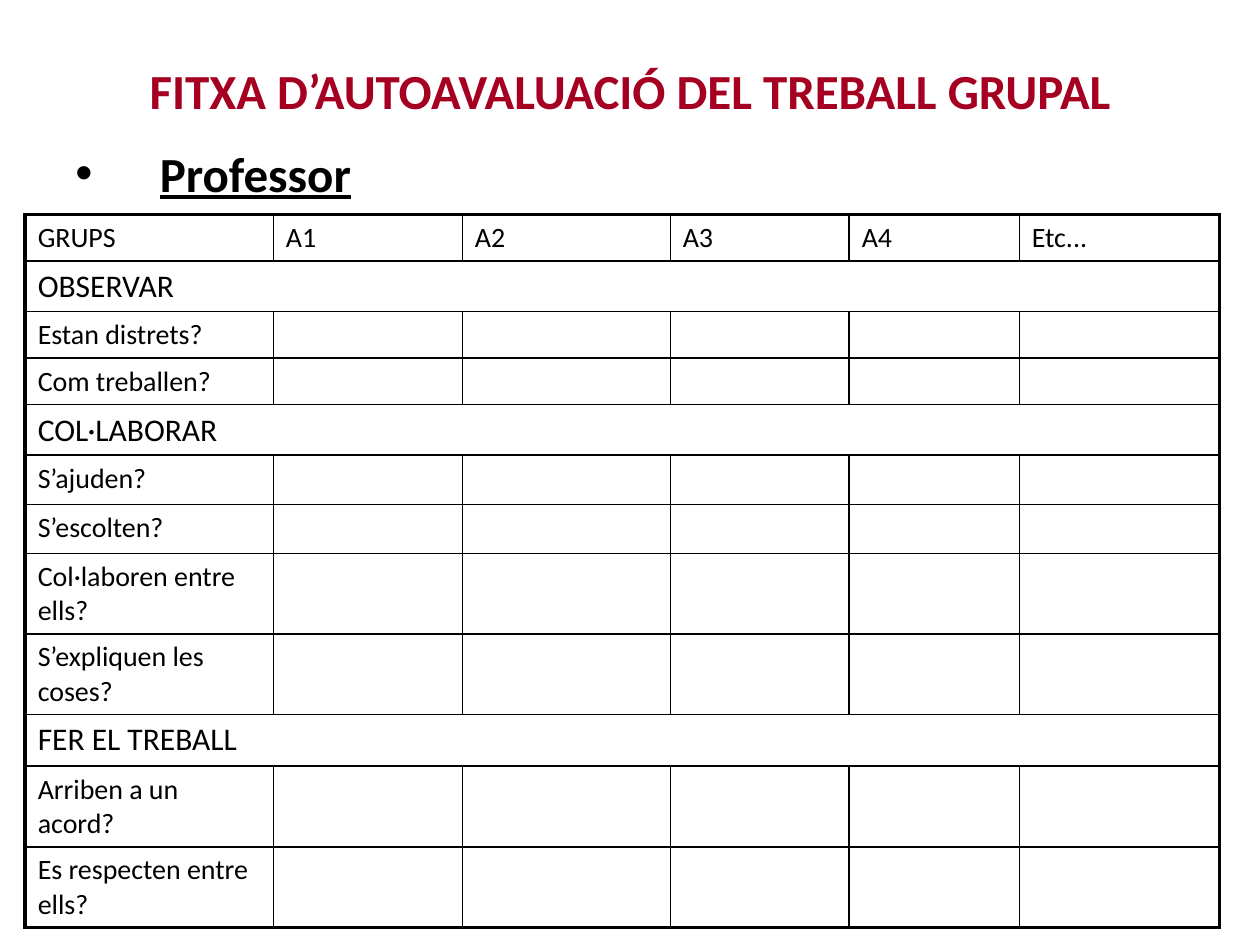
from lxml.etree import SubElement
from pptx import Presentation
from pptx.dml.color import RGBColor
from pptx.enum.text import MSO_ANCHOR as ANCHOR, PP_ALIGN as ALIGN
from pptx.oxml.ns import qn
from pptx.util import Inches, Pt

HEADER = ["GRUPS", "A1", "A2", "A3", "A4", "Etc..."]
SECTIONS = {
    "OBSERVAR": ["Estan distrets?", "Com treballen?"],
    "COL·LABORAR": ["S’ajuden?", "S’escolten?", "Col·laboren entre ells?",
                    "S’expliquen les coses?"],
    "FER EL TREBALL": ["Arriben a un acord?", "Es respecten entre ells?"],
}
COLUMN_WIDTHS = [1.97, 1.5, 1.65, 1.42, 1.35, 1.59]
ROW_HEIGHTS = [0.37, 0.4, 0.37, 0.37, 0.4, 0.39, 0.39, 0.64, 0.64, 0.41, 0.64, 0.64]


def rgb(color):
    return RGBColor.from_string(color)


class Sheet:
    """Style and current slide; boxes are shares of the slide's size."""
    font, ink, accent = "Calibri", "000000", "A50021"
    heading, section, body = 28, 18, 16
    thin, thick = 1, 2.25

    def __init__(self, prs):
        self.prs = prs
        self.slide = prs.slides.add_slide(prs.slide_layouts[5])

    def box(self, x, y, w, h):
        width, height = self.prs.slide_width, self.prs.slide_height
        return int(x * width), int(y * height), int(w * width), int(h * height)

    def style(self, p, size, color=None, bold=False, underline=False):
        font = p.font
        font.name, font.size = self.font, Pt(size)
        font.bold, font.underline = bold, underline
        font.color.rgb = rgb(color or self.ink)

    def title(self, text, *share):
        sp = self.slide.shapes.title
        sp.left, sp.top, sp.width, sp.height = self.box(*share)
        tf = sp.text_frame
        tf.text, tf.vertical_anchor = text, ANCHOR.MIDDLE
        p = tf.paragraphs[0]
        p.alignment = ALIGN.CENTER
        self.style(p, self.heading, self.accent, bold=True)

    def bullet(self, text, *share):
        tf = self.slide.shapes.add_textbox(*self.box(*share)).text_frame
        tf.word_wrap = True
        p = tf.paragraphs[0]
        p.text = text
        indent = Inches(0.67)
        props = p._p.get_or_add_pPr()
        props.set("marL", str(indent))
        props.set("indent", str(-indent))
        SubElement(props, qn("a:buFont"), typeface="Arial")
        SubElement(props, qn("a:buChar"), char="•")
        self.style(p, self.heading, bold=True, underline=True)

    def borders(self, cell, heavy):
        props = cell._tc.get_or_add_tcPr()
        for side in "LRTB":
            width = self.thick if side in heavy else self.thin
            line = SubElement(props, qn(f"a:ln{side}"), w=str(Pt(width)))
            fill = SubElement(line, qn("a:solidFill"))
            SubElement(fill, qn("a:srgbClr"), val=self.ink)

    def table(self, rows, widths, heights, *share):
        last_row, last_col = len(rows) - 1, len(widths) - 1
        table = self.slide.shapes.add_table(
            len(rows), len(widths), *self.box(*share)).table
        table.first_row = table.horz_banding = False
        for column, width in zip(table.columns, widths):
            column.width = Inches(width)
        for row, height in zip(table.rows, heights):
            row.height = Inches(height)
        for r, texts in enumerate(rows):
            is_section = len(texts) == 1
            for c in range(len(widths)):
                cell = table.cell(r, c)
                # Thick frame outside, thin lines inside
                edges = {"L": c == 0, "R": c == last_col or is_section,
                         "T": r == 0, "B": r == last_row}
                self.borders(cell, [side for side, outer in edges.items() if outer])
                cell.fill.background()
                p = cell.text_frame.paragraphs[0]
                if c < len(texts) and texts[c]:
                    p.text = texts[c]
                self.style(p, self.section if is_section else self.body)
            if is_section:
                table.cell(r, 0).merge(table.cell(r, last_col))


def main():
    prs = Presentation()
    prs.slide_width, prs.slide_height = Inches(10), Inches(7.5)
    sheet = Sheet(prs)

    # Headings
    sheet.title("FITXA D’AUTOAVALUACIÓ DEL TREBALL GRUPAL", 0.05, 0.01, 0.9, 0.17)
    sheet.bullet("Professor", 0.05, 0.145, 0.92, 0.07)

    # Assessment grid: a one-item row is a section across all columns
    rows = [HEADER]
    for section, questions in SECTIONS.items():
        rows.append([section])
        rows += [[question] + [""] * (len(HEADER) - 1) for question in questions]
    sheet.table(rows, COLUMN_WIDTHS, ROW_HEIGHTS, 0.02, 0.227, 0.95, 0.75)

    prs.save("out.pptx")


if __name__ == "__main__":
    main()
